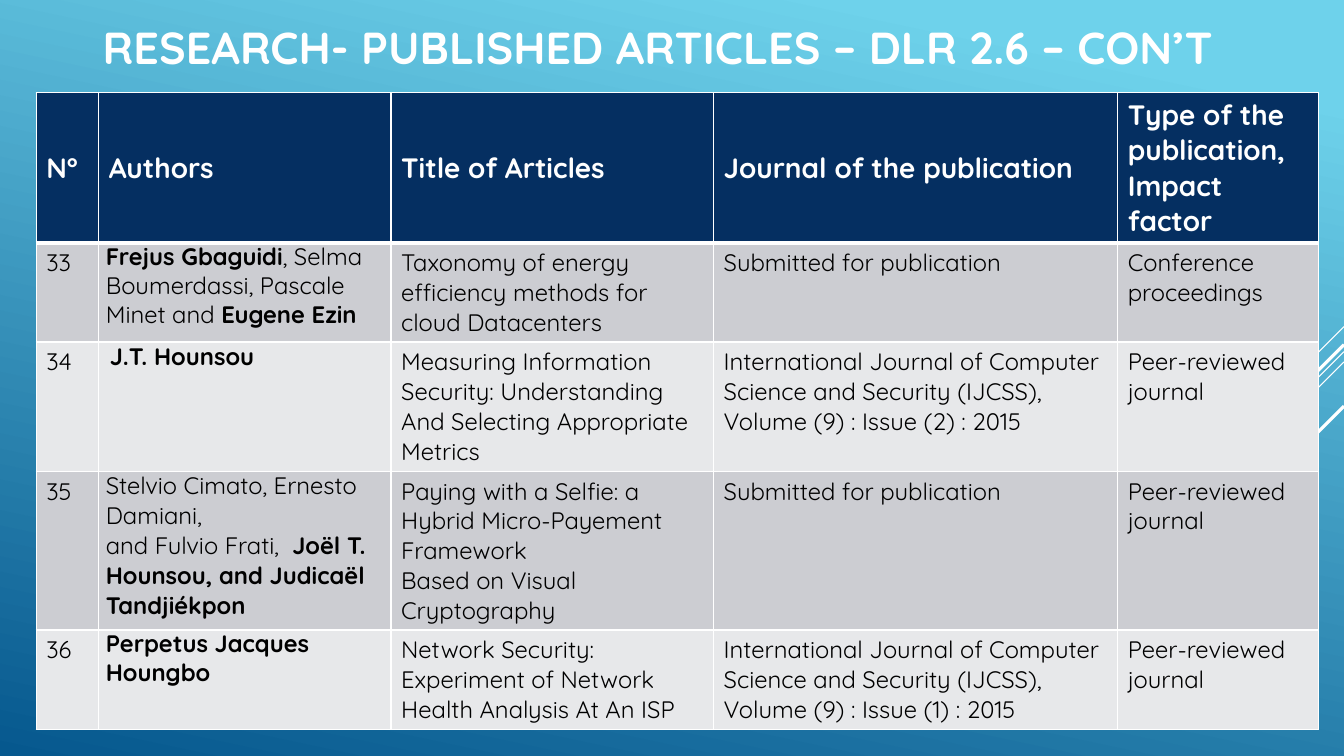
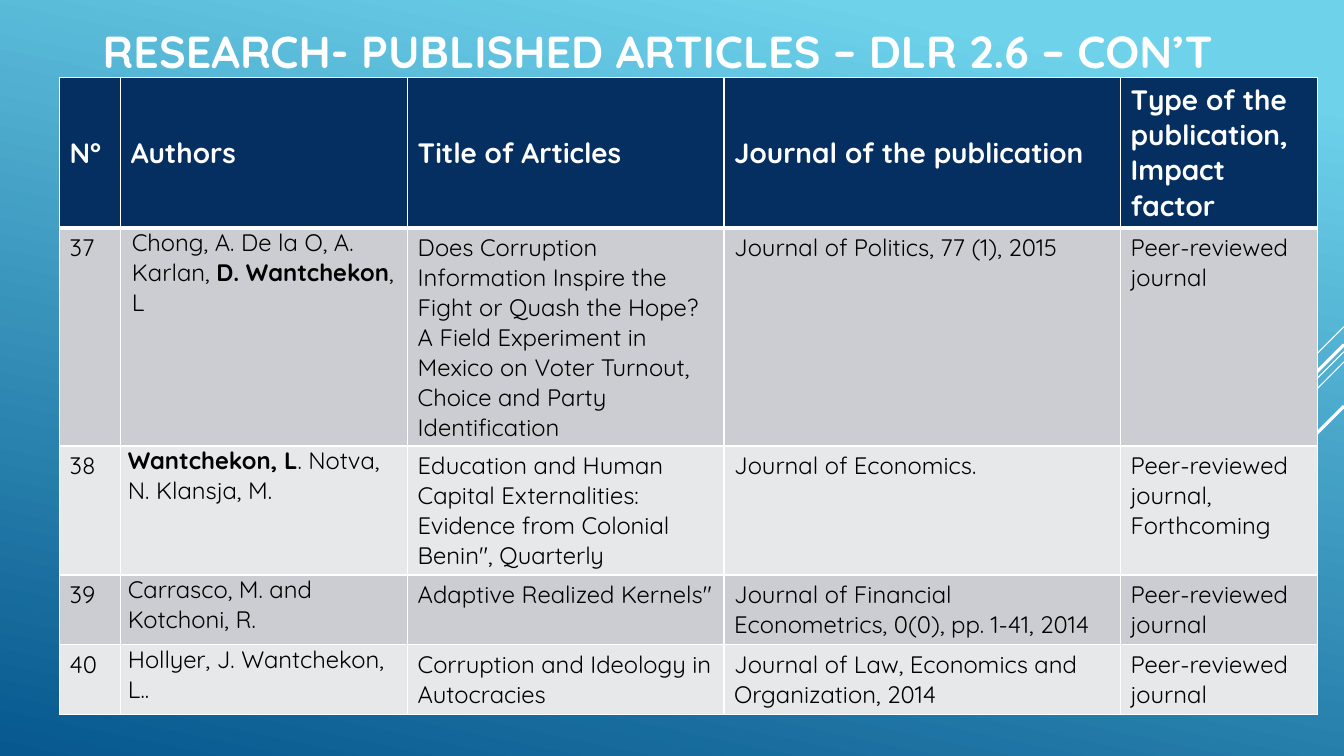
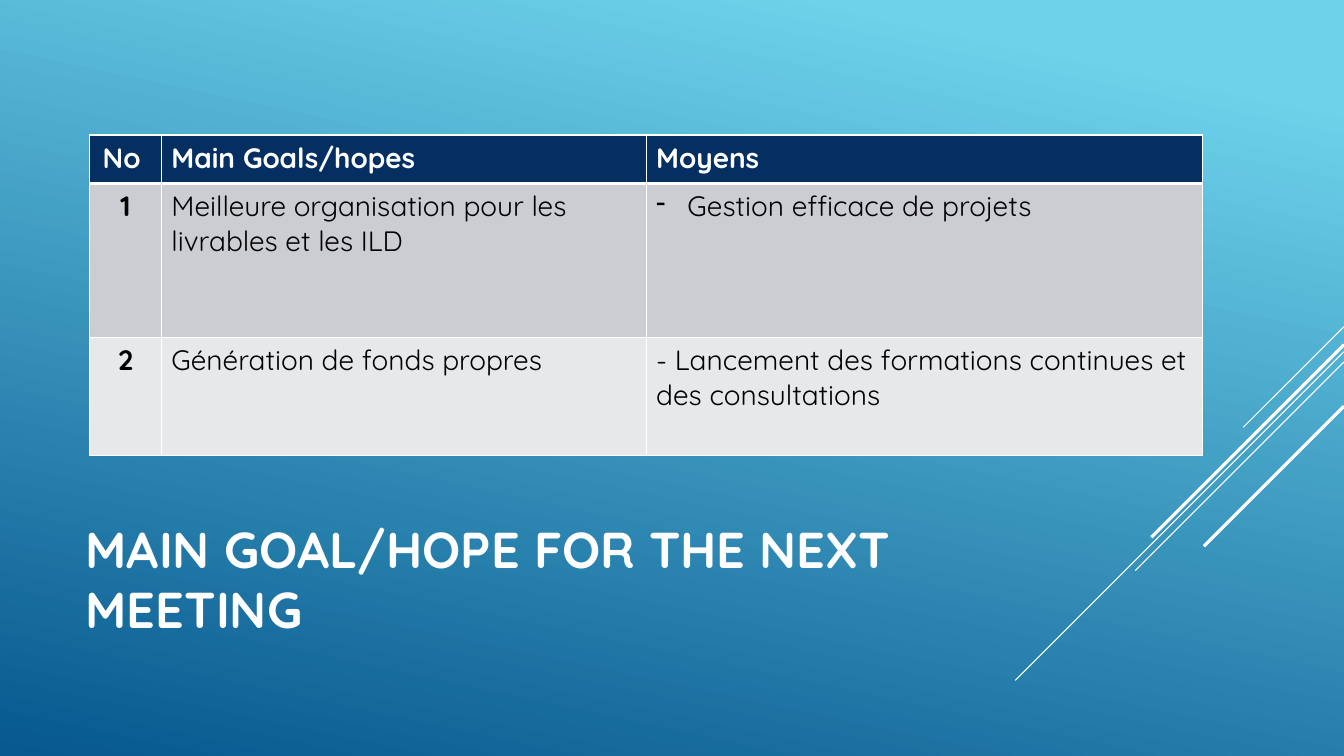
from dataclasses import dataclass

from lxml.etree import SubElement
from pptx import Presentation
from pptx.dml.color import RGBColor
from pptx.enum.shapes import MSO_CONNECTOR
from pptx.enum.text import MSO_ANCHOR as Anchor, PP_ALIGN as Align
from pptx.oxml.ns import qn
from pptx.slide import Slide
from pptx.table import _Cell as TableCell
from pptx.text.text import TextFrame
from pptx.util import Inches, Pt

WIDTH, HEIGHT = Inches(13.33), Inches(7.5)
FONT = "Quicksand"
WHITE = RGBColor(0xFF, 0xFF, 0xFF)
BLACK = RGBColor(0x00, 0x00, 0x00)
SKY = RGBColor(0x6E, 0xD2, 0xEB)
OCEAN = RGBColor(0x06, 0x58, 0x8E)
NAVY = RGBColor(0x05, 0x2F, 0x61)
BANDS = (RGBColor(0xCC, 0xCD, 0xD2), RGBColor(0xE7, 0xE8, 0xEA))

HEADER_SIZE = 20
ARTICLE_SIZE = 17
LINE_FACTOR = 1.25
THIN, THICK = 1, 3


@dataclass(frozen=True)
class Ray:
    """A 45 degree line from the right edge; lengths in percent of the height."""
    top: float
    reach: float
    weight: float


@dataclass(frozen=True)
class Title:
    """Place in percent of the slide."""
    text: str
    left: float
    top: float
    width: float
    height: float
    size: float = 32


@dataclass(frozen=True)
class Cell:
    """Text with **bold** parts; a tight cell has narrow insets."""
    text: str
    align: Align | None = None
    tight: bool = False
    indent: float = 0
    bullet: str = ""
    before: float = 0
    spacing: float | None = None


@dataclass(frozen=True)
class Table:
    """Place in percent of the slide, columns as weights, row heights in EMU."""
    left: float
    top: float
    width: float
    columns: tuple[int, ...]
    heights: list[int]
    rows: list[tuple[Cell | str, ...]]
    body_size: float
    header_anchor: Anchor = Anchor.TOP


RAYS = (
    Ray(43.2, 13.33, 0.75),
    Ray(46.53, 43.47, 0.75),
    Ray(47.87, 27.6, 0.75),
    Ray(45.6, 25.47, 2.25),
    Ray(53.73, 18.53, 2.25),
)

ARTICLES_TITLE = "RESEARCH- PUBLISHED ARTICLES – DLR 2.6 – CON’T"
ARTICLE_COLUMNS = (62, 290, 320, 401, 199)
ARTICLE_HEADER = ("N°", "Authors", "Title of Articles", "Journal of the publication",
                  "Type of the publication, Impact factor")
HEADER_LINES = 4
SUBMITTED = "Submitted for publication"
PEER_REVIEWED = "Peer-reviewed journal"
IJCSS = ("International Journal of Computer Science and Security (IJCSS), "
         "Volume (9) : Issue ({}) : 2015")


def across(percent: float) -> int:
    return round(WIDTH * percent / 100)


def down(percent: float) -> int:
    return round(HEIGHT * percent / 100)


def authors(text: str, **layout: float) -> Cell:
    return Cell(text, tight=True, **layout)


FIRST_ARTICLES = [
    ("33",
     authors("**Frejus Gbaguidi**, Selma Boumerdassi, Pascale Minet and **Eugene Ezin**",
             before=0.7, spacing=0.96),
     "Taxonomy of energy efficiency methods for cloud Datacenters",
     SUBMITTED, "Conference proceedings"),
    ("34",
     authors("**J.T. Hounsou**", indent=0.04, before=0.8),
     "Measuring Information Security: Understanding And Selecting Appropriate Metrics",
     IJCSS.format(2), PEER_REVIEWED),
    ("35",
     authors("Stelvio Cimato, Ernesto Damiani,\n"
             "and Fulvio Frati,  **Joël T. Hounsou, and Judicaël Tandjiékpon**"),
     "Paying with a Selfie: a Hybrid Micro-Payement Framework\nBased on Visual Cryptography",
     SUBMITTED, PEER_REVIEWED),
    ("36",
     authors("**Perpetus Jacques Houngbo**", before=0.7, spacing=0.96),
     "Network Security: Experiment of Network Health Analysis At An ISP",
     IJCSS.format(1), PEER_REVIEWED),
]

SECOND_ARTICLES = [
    ("37",
     authors("Chong, A. De la O, A. Karlan, **D. Wantchekon**, L", indent=0.04, before=0.8),
     "Does Corruption Information Inspire the Fight or Quash the Hope? A Field Experiment "
     "in Mexico on Voter Turnout, Choice and Party Identification",
     "Journal of Politics, 77 (1), 2015", PEER_REVIEWED),
    ("38",
     authors("**Wantchekon, L**. Notva, N. Klansja, M."),
     'Education and Human Capital Externalities: Evidence from Colonial Benin", Quarterly',
     "Journal of Economics.", "Peer-reviewed journal, Forthcoming"),
    ("39",
     authors("Carrasco, M. and Kotchoni, R."),
     'Adaptive Realized Kernels"',
     "Journal of Financial Econometrics, 0(0), pp. 1-41, 2014", PEER_REVIEWED),
    ("40",
     authors("Hollyer, J. Wantchekon, L.."),
     "Corruption and Ideology in Autocracies",
     "Journal of Law, Economics and Organization, 2014", PEER_REVIEWED),
]

GOALS = [
    (Cell("No ", align=Align.CENTER), "Main Goals/hopes", "Moyens"),
    (Cell("**1**", align=Align.CENTER),
     "Meilleure organisation pour les livrables et les ILD",
     Cell("Gestion efficace de projets", indent=0.31, bullet="-")),
    (Cell("**2**", align=Align.CENTER),
     "Génération de fonds propres",
     "- Lancement des formations continues et des consultations"),
]


def lines_height(lines: int, size: float) -> int:
    """Height of a table row that holds this many lines of text."""
    return Pt(lines * size * LINE_FACTOR) + Inches(0.1)


def article_table(left: float, top: float, width: float,
                  articles: list[tuple[Cell | str, ...]], lines: tuple[int, ...]) -> Table:
    heights = [lines_height(HEADER_LINES, HEADER_SIZE)]
    heights += [lines_height(count, ARTICLE_SIZE) for count in lines]
    return Table(left, top, width, ARTICLE_COLUMNS, heights, [ARTICLE_HEADER, *articles],
                 ARTICLE_SIZE, Anchor.MIDDLE)


def write(frame: TextFrame, text: str, *, size: float, color: RGBColor, bold: bool = False,
          align: Align | None = None, indent: float = 0, bullet: str = "",
          before: float = 0, spacing: float | None = None) -> None:
    """Fill a frame: one paragraph per line, ** switches bold on and off."""
    for number, line in enumerate(text.split("\n")):
        paragraph = frame.add_paragraph() if number else frame.paragraphs[0]
        paragraph.alignment = align
        paragraph.line_spacing = spacing
        paragraph.space_before = Pt(before)
        properties = paragraph._p.get_or_add_pPr()
        if indent:
            properties.set("marL", str(Inches(indent)))
        if bullet:
            properties.set("indent", str(-Inches(indent)))
            SubElement(properties, qn("a:buChar")).set("char", bullet)
        for part, piece in enumerate(line.split("**")):
            if not piece:
                continue
            run = paragraph.add_run()
            run.text = piece
            run.font.name = FONT
            run.font.size = Pt(size)
            run.font.bold = bold or part % 2 == 1
            run.font.color.rgb = color


def set_borders(cell: TableCell, top: float, bottom: float) -> None:
    properties = cell._tc.get_or_add_tcPr()
    for side, weight in (("L", THIN), ("R", THIN), ("T", top), ("B", bottom)):
        line = SubElement(properties, qn(f"a:ln{side}"), w=str(Pt(weight)))
        fill = SubElement(line, qn("a:solidFill"))
        SubElement(fill, qn("a:srgbClr")).set("val", str(WHITE))


def draw_rays(slide: Slide) -> None:
    for ray in RAYS:
        top, reach = down(ray.top), down(ray.reach)
        connector = slide.shapes.add_connector(
            MSO_CONNECTOR.STRAIGHT, WIDTH, top, WIDTH - reach, top + reach)
        connector.line.color.rgb = WHITE
        connector.line.width = Pt(ray.weight)
        SubElement(connector._element.spPr, qn("a:effectLst"))


def draw_title(slide: Slide, title: Title) -> None:
    box = slide.shapes.add_textbox(across(title.left), down(title.top),
                                   across(title.width), down(title.height))
    frame = box.text_frame
    frame.word_wrap = True
    frame.vertical_anchor = Anchor.MIDDLE
    write(frame, title.text, size=title.size, color=WHITE, bold=True)


def draw_table(slide: Slide, spec: Table) -> None:
    width = across(spec.width)
    table = slide.shapes.add_table(len(spec.rows), len(spec.columns), across(spec.left),
                                   down(spec.top), width, sum(spec.heights)).table
    table.horz_banding = False
    for column, weight in zip(table.columns, spec.columns):
        column.width = round(width * weight / sum(spec.columns))
    for index, (row, height, contents) in enumerate(zip(table.rows, spec.heights, spec.rows)):
        row.height = height
        header = index == 0
        for cell, content in zip(row.cells, contents):
            item = Cell(content) if isinstance(content, str) else content
            set_borders(cell, THICK if index == 1 else THIN, THICK if header else THIN)
            cell.fill.solid()
            cell.fill.fore_color.rgb = NAVY if header else BANDS[(index - 1) % 2]
            cell.vertical_anchor = spec.header_anchor if header else Anchor.TOP
            if item.tight:
                cell.margin_left = cell.margin_right = Inches(0.07)
                cell.margin_top = cell.margin_bottom = 0
            write(cell.text_frame, item.text, bold=header, align=item.align,
                  size=HEADER_SIZE if header else spec.body_size,
                  color=WHITE if header else BLACK, indent=item.indent,
                  bullet=item.bullet, before=item.before, spacing=item.spacing)


def paint_background(presentation: Presentation) -> None:
    fill = presentation.slide_master.background.fill
    fill.gradient()
    fill.gradient_angle = 360 - 102
    for stop, color, position in zip(fill.gradient_stops, (SKY, OCEAN), (0.1, 1)):
        stop.color.rgb = color
        stop.position = position


def main() -> None:
    presentation = Presentation()
    presentation.slide_width, presentation.slide_height = WIDTH, HEIGHT
    paint_background(presentation)
    blank = presentation.slide_layouts[6]
    pages = (
        (Title(ARTICLES_TITLE, 6.9, 0, 86.25, 12.27),
         article_table(2.7, 12.27, 95.4, FIRST_ARTICLES, (3, 4, 5, 3))),
        (Title(ARTICLES_TITLE, 6.9, 0, 86.25, 13.33),
         article_table(4.43, 10.27, 93.6, SECOND_ARTICLES, (7, 4, 2, 2))),
        (Title("MAIN GOAL/HOPE FOR THE NEXT MEETING", 5.63, 65.47, 70, 22, size=36),
         Table(6.68, 17.87, 82.8, (71, 481, 552), [down(6.4), down(20.4), down(15.6)],
               GOALS, HEADER_SIZE)),
    )
    for title, table in pages:
        slide = presentation.slides.add_slide(blank)
        draw_rays(slide)
        draw_title(slide, title)
        draw_table(slide, table)
    presentation.save("out.pptx")


if __name__ == "__main__":
    main()
